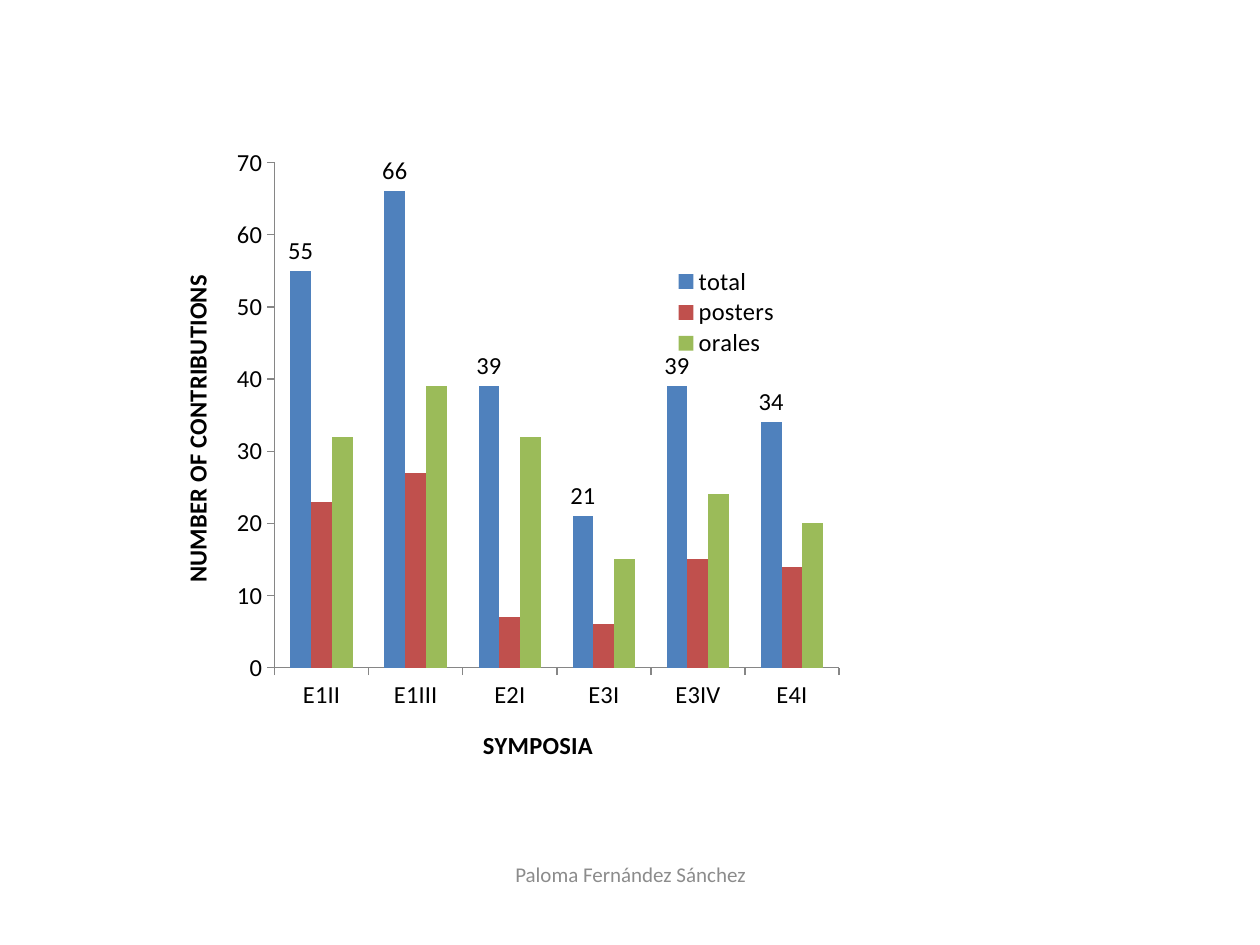
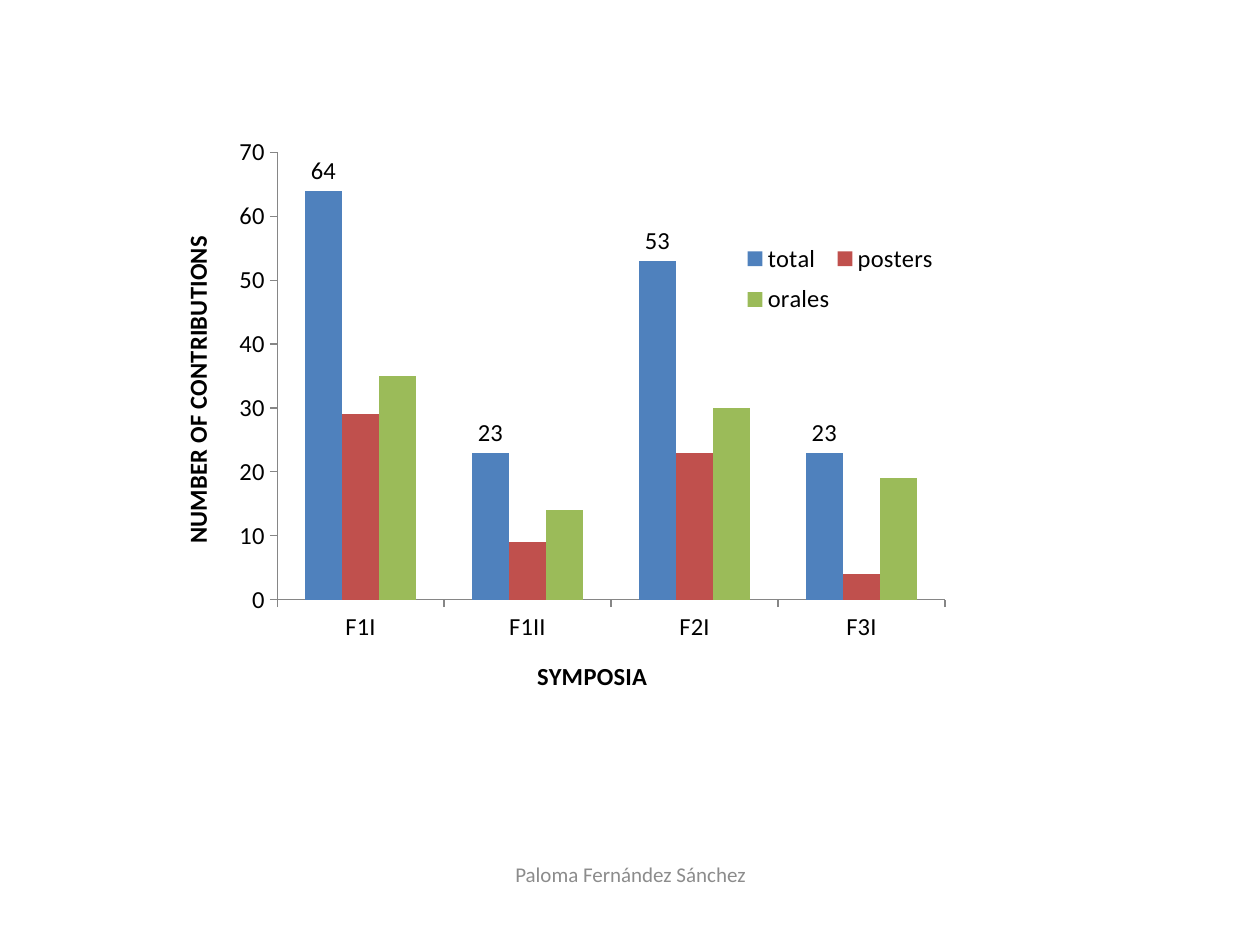
from dataclasses import dataclass

from lxml import etree
from pptx import Presentation
from pptx.chart.data import CategoryChartData
from pptx.dml.color import RGBColor
from pptx.enum.chart import (XL_CHART_TYPE, XL_LABEL_POSITION,
                             XL_LEGEND_POSITION, XL_TICK_MARK)
from pptx.enum.text import MSO_ANCHOR, PP_ALIGN
from pptx.oxml.ns import qn
from pptx.util import Inches, Pt

COLUMN = XL_CHART_TYPE.COLUMN_CLUSTERED
LABEL_ABOVE = XL_LABEL_POSITION.OUTSIDE_END
LEGEND_RIGHT = XL_LEGEND_POSITION.RIGHT
TICK_OUT, TICK_NONE = XL_TICK_MARK.OUTSIDE, XL_TICK_MARK.NONE
MIDDLE = MSO_ANCHOR.MIDDLE
CENTER = PP_ALIGN.CENTER


@dataclass(frozen=True)
class Theme:
    """Colours, font and type sizes shared by the slides."""
    font: str = "Calibri"
    text: str = "000000"
    muted: str = "8C8C8C"
    axis: str = "868686"
    series: tuple = ("4F81BD", "C0504D", "9BBB59")
    base_size: int = 10
    chart_size: int = 14
    footer_size: int = 12


THEME = Theme()
FOOTER = "Paloma Fernández Sánchez"
SERIES_NAMES = ("total", "posters", "orales")

SYMPOSIA_E = {
    "E1II": (55, 23, 32),
    "E1III": (66, 27, 39),
    "E2I": (39, 7, 32),
    "E3I": (21, 6, 15),
    "E3IV": (39, 15, 24),
    "E4I": (34, 14, 20),
}
SYMPOSIA_F = {
    "F1I": (64, 29, 35),
    "F1II": (23, 9, 14),
    "F2I": (53, 23, 30),
    "F3I": (23, 4, 19),
}


def style_font(font, size, color=THEME.text, bold=False):
    """Apply the theme font with a size, colour and weight."""
    font.name = THEME.font
    font.size = Pt(size)
    font.bold = bold
    font.color.rgb = RGBColor.from_string(color)


def make_layout(frame, area, inner=False):
    """Return a manual layout placing an area, in slide inches, in a chart frame."""
    layout = etree.Element(qn("c:layout"))
    manual = etree.SubElement(layout, qn("c:manualLayout"))
    left, top, width, height = frame
    x, y, w, h = area
    values = {"xMode": "edge", "yMode": "edge",
              "x": (x - left) / width, "y": (y - top) / height,
              "w": w / width, "h": h / height}
    if inner:
        values = {"layoutTarget": "inner", **values}
    for tag, value in values.items():
        etree.SubElement(manual, qn(f"c:{tag}")).set("val", str(value))
    return layout


def drop_layout(element):
    """Remove the automatic layout of a chart part."""
    for layout in element.findall(qn("c:layout")):
        element.remove(layout)


def place_plot(chart, frame, area):
    """Fix the inner plot area."""
    plot_area = chart._chartSpace.chart.plotArea
    drop_layout(plot_area)
    plot_area.insert(0, make_layout(frame, area, inner=True))


def add_legend(chart, frame, area):
    """Add a legend over the plot at a fixed place."""
    chart.has_legend = True
    legend = chart.legend
    legend.position = LEGEND_RIGHT
    legend.include_in_layout = False
    style_font(legend.font, THEME.chart_size)
    element = legend._element
    drop_layout(element)
    element.find(qn("c:overlay")).addprevious(make_layout(frame, area))


def style_axis(axis, title):
    """Give an axis its title, line, ticks and label font."""
    axis.has_major_gridlines = False
    axis.major_tick_mark = TICK_OUT
    axis.minor_tick_mark = TICK_NONE
    axis.format.line.color.rgb = RGBColor.from_string(THEME.axis)
    axis.format.line.width = Pt(0.75)
    style_font(axis.tick_labels.font, THEME.chart_size)
    tf = axis.axis_title.text_frame
    tf.text = title
    style_font(tf.paragraphs[0].runs[0].font, THEME.chart_size, bold=True)


def add_contributions_chart(s, symposia, frame, plot_area, legend_area):
    """Add a column chart of contributions per symposium."""
    data = CategoryChartData()
    data.categories = list(symposia)
    for name, values in zip(SERIES_NAMES, zip(*symposia.values())):
        data.add_series(name, values)
    chart = s.shapes.add_chart(COLUMN, *map(Inches, frame), data).chart
    chart.has_title = False
    style_font(chart.font, THEME.base_size)

    plot = chart.plots[0]
    plot.vary_by_categories = False
    plot.gap_width = 150
    plot.overlap = 0
    for series, color in zip(plot.series, THEME.series):
        series.invert_if_negative = False
        series.format.fill.solid()
        series.format.fill.fore_color.rgb = RGBColor.from_string(color)
    labels = plot.series[0].data_labels
    labels.show_value = True
    labels.position = LABEL_ABOVE
    style_font(labels.font, THEME.chart_size)

    style_axis(chart.category_axis, "SYMPOSIA")
    style_axis(chart.value_axis, "NUMBER OF CONTRIBUTIONS")
    chart.value_axis.minimum_scale = 0
    chart.value_axis.maximum_scale = 70
    chart.value_axis.major_unit = 10
    place_plot(chart, frame, plot_area)
    add_legend(chart, frame, legend_area)


def add_footer(s):
    """Add the centred author footer."""
    sp = s.shapes.add_textbox(Inches(3.42), Inches(6.74), Inches(3.17), Inches(0.4))
    tf = sp.text_frame
    tf.word_wrap = True
    tf.vertical_anchor = MIDDLE
    tf.text = FOOTER
    p = tf.paragraphs[0]
    p.alignment = CENTER
    style_font(p.runs[0].font, THEME.footer_size, THEME.muted)


def add_chart_slide(prs, symposia, frame, plot_area, legend_area):
    """Add a slide holding one chart and the footer."""
    s = prs.slides.add_slide(prs.slide_layouts[6])
    add_contributions_chart(s, symposia, frame, plot_area, legend_area)
    add_footer(s)


def main():
    """Build and save the presentation."""
    prs = Presentation()
    prs.slide_width = Inches(10)
    prs.slide_height = Inches(7.5)
    add_chart_slide(prs, SYMPOSIA_E, frame=(1.22, 1.07, 6.54, 5.2),
                    plot_area=(2.18, 1.29, 4.48, 4.01),
                    legend_area=(5.33, 2.11, 0.87, 0.74))
    add_chart_slide(prs, SYMPOSIA_F, frame=(1.22, 0.99, 7.4, 4.72),
                    plot_area=(2.2, 1.21, 5.3, 3.55),
                    legend_area=(5.87, 1.85, 1.6, 0.73))
    prs.save("out.pptx")


if __name__ == "__main__":
    main()
